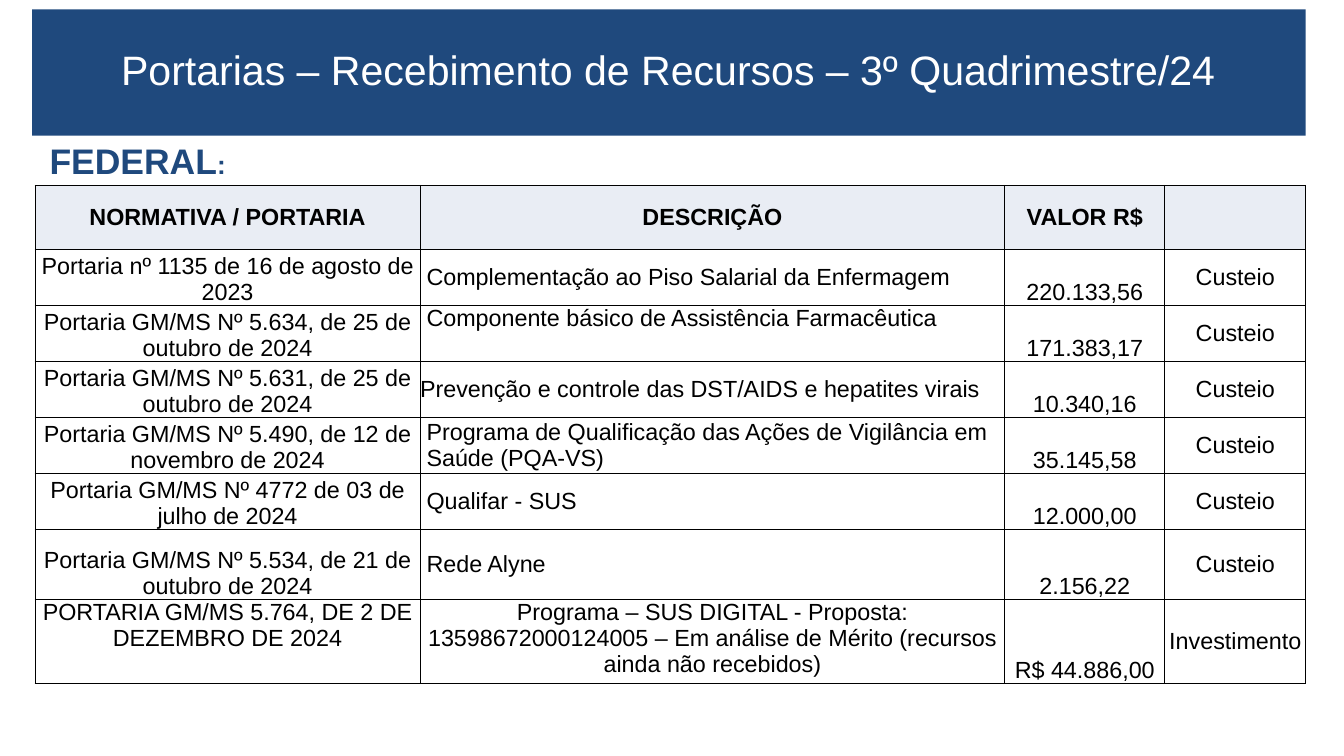
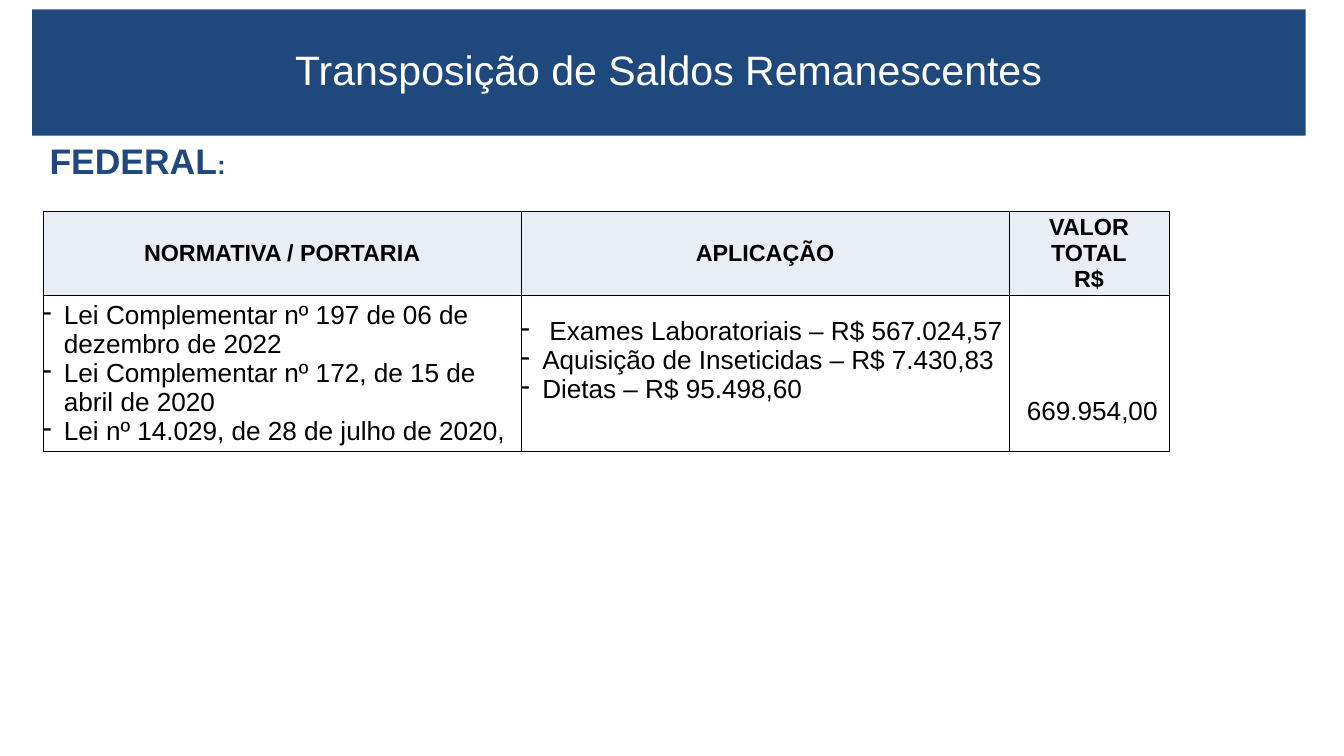
"""Builds two slides on federal health funds, each with a title band, a label and a table."""
import pptx
import pptx.dml.color
import pptx.enum.shapes
import pptx.enum.text
import pptx.oxml
import pptx.oxml.ns
import pptx.util

Pt = pptx.util.Pt
Align = pptx.enum.text.PP_ALIGN
Anchor = pptx.enum.text.MSO_ANCHOR
INK = {"navy": "1F497D", "pale": "E9EDF4", "white": "FFFFFF", "black": "000000"}
FACE = "Arial"
BAND = (34.5, 10, 1364.5, 135.5)
LABEL = (46, 145.5, 213, 53)
BODY = 25
LIST = 28
INSET = 7
HANG = 22.5

FUNDS = [
    ("Portaria nº 1135 de 16 de agosto de 2023",
     "Complementação ao Piso Salarial da Enfermagem", "220.133,56", "Custeio"),
    ("Portaria GM/MS Nº 5.634, de 25 de outubro de 2024",
     "Componente básico de Assistência Farmacêutica", "171.383,17", "Custeio"),
    ("Portaria GM/MS Nº 5.631, de 25 de outubro de 2024",
     "Prevenção e controle das DST/AIDS e hepatites virais", "10.340,16", "Custeio"),
    ("Portaria GM/MS Nº 5.490, de 12 de novembro de 2024",
     "Programa de Qualificação das Ações de Vigilância em Saúde (PQA-VS)",
     "35.145,58", "Custeio"),
    ("Portaria GM/MS Nº 4772 de 03 de julho de 2024",
     "Qualifar - SUS", "12.000,00", "Custeio"),
    ("Portaria GM/MS Nº 5.534, de 21 de outubro de 2024",
     "Rede Alyne", "2.156,22", "Custeio"),
    ("PORTARIA GM/MS 5.764, DE 2 DE DEZEMBRO DE 2024",
     "Programa – SUS DIGITAL - Proposta: 13598672000124005 – "
     "Em análise de Mérito (recursos ainda não recebidos)",
     "R$ 44.886,00", "Investimento"),
]
LAWS = ["Lei Complementar nº 197 de 06 de dezembro de 2022",
        "Lei Complementar nº 172, de 15 de abril de 2020",
        "Lei nº 14.029, de 28 de julho de 2020,"]
USES = [" Exames Laboratoriais – R$ 567.024,57",
        "Aquisição de Inseticidas – R$ 7.430,83",
        "Dietas – R$ 95.498,60"]


def tint(name):
    """Return a named colour."""
    return pptx.dml.color.RGBColor.from_string(INK[name])


def style(font, size, color, bold=False):
    """Set the face, size, colour and weight of a font."""
    font.name, font.size, font.bold = FACE, Pt(size), bold
    font.color.rgb = tint(color)


def band(slide, box, title):
    """Draw the title band."""
    shape = slide.shapes.add_shape(
        pptx.enum.shapes.MSO_SHAPE.RECTANGLE, *map(Pt, box))
    shape.shadow.inherit = False
    shape.fill.solid()
    shape.fill.fore_color.rgb = tint("navy")
    shape.line.fill.background()
    frame = shape.text_frame
    frame.margin_left = frame.margin_right = frame.margin_top = frame.margin_bottom = 0
    frame.vertical_anchor = Anchor.MIDDLE
    para = frame.paragraphs[0]
    para.text, para.alignment, para.line_spacing = title, Align.CENTER, 0.9
    style(para.font, 44, "white")


def label(slide, box):
    """Write the label of the funding level."""
    frame = slide.shapes.add_textbox(*map(Pt, box)).text_frame
    frame.word_wrap = False
    frame.auto_size = pptx.enum.text.MSO_AUTO_SIZE.SHAPE_TO_FIT_TEXT
    for text, size in (("FEDERAL", 38), (":", 28)):
        run = frame.paragraphs[0].add_run()
        run.text = text
        style(run.font, size, "navy", True)


def edge(cell):
    """Give a cell thin black borders."""
    props = cell._tc.get_or_add_tcPr()
    for spot, side in enumerate(("lnL", "lnR", "lnT", "lnB")):
        line = pptx.oxml.parse_xml(
            f'<a:{side} {pptx.oxml.ns.nsdecls("a")} w="12700"><a:solidFill>'
            f'<a:srgbClr val="{INK["black"]}"/></a:solidFill></a:{side}>')
        props.insert(spot, line)


def dash(para):
    """Turn a paragraph into a hanging dash item."""
    props = para._p.get_or_add_pPr()
    props.set("marL", str(Pt(HANG)))
    props.set("indent", str(-Pt(HANG)))
    props.append(pptx.oxml.parse_xml(
        f'<a:buChar {pptx.oxml.ns.nsdecls("a")} char="-"/>'))


def write(cell, lines, size=BODY, bold=False, align=Align.CENTER,
          anchor=Anchor.MIDDLE, sides=(0, 0), foot=0, bullet=False):
    """Fill a cell with paragraphs."""
    cell.margin_left, cell.margin_right = map(Pt, sides)
    cell.margin_top, cell.margin_bottom = 0, Pt(foot)
    cell.vertical_anchor = anchor
    cell.text = "\n".join(lines)
    for para in cell.text_frame.paragraphs:
        para.alignment = align
        style(para.font, size, "black", bold)
        if bullet:
            dash(para)


def grid(slide, spot, cols, rows, heads):
    """Add a bordered table with a pale header row."""
    table = slide.shapes.add_table(
        len(rows), len(cols), *map(Pt, (*spot, sum(cols), sum(rows)))).table
    table.first_row = table.horz_banding = False
    for col, width in zip(table.columns, cols):
        col.width = Pt(width)
    for row, height in zip(table.rows, rows):
        row.height = Pt(height)
    for cell in table.iter_cells():
        cell.fill.background()
        edge(cell)
    for col, head in enumerate(heads):
        cell = table.cell(0, col)
        cell.fill.solid()
        cell.fill.fore_color.rgb = tint("pale")
        write(cell, head.split("\n"), bold=True)
    return table


def funds(slide, spot):
    """Place the table of funds received."""
    table = grid(slide, spot, (412.5, 626.5, 171.5, 151),
                 (68.5, *[55.7] * 5, 75, 83.5),
                 ("NORMATIVA / PORTARIA", "DESCRIÇÃO", "VALOR R$", ""))
    last = len(FUNDS)
    for row, (norm, note, value, kind) in enumerate(FUNDS, 1):
        end = row == last
        pad = (INSET, INSET) if end else (0, 0)
        write(table.cell(row, 0), [norm], sides=pad,
              anchor=Anchor.TOP if end else Anchor.BOTTOM)
        write(table.cell(row, 1), [note],
              sides=pad if end else (0 if row == 3 else INSET, 0),
              align=Align.CENTER if end else Align.LEFT,
              anchor=Anchor.TOP if row in (2, last) else Anchor.MIDDLE)
        write(table.cell(row, 2), [value], anchor=Anchor.BOTTOM)
        write(table.cell(row, 3), [kind])


def shifts(slide, spot):
    """Place the table of transferred balances."""
    table = grid(slide, spot, (512.5, 522.5, 171.5), (90, 168),
                 ("NORMATIVA / PORTARIA", "APLICAÇÃO", "VALOR TOTAL\nR$"))
    for col, (items, foot) in enumerate(((LAWS, 0), (USES, LIST))):
        write(table.cell(1, col), items, LIST, align=Align.LEFT,
              foot=foot, bullet=True)
    write(table.cell(1, 2), ["669.954,00"], LIST, anchor=Anchor.BOTTOM,
          sides=(INSET, 0), foot=LIST)


def main():
    """Build and save both slides."""
    deck = pptx.Presentation()
    deck.slide_width, deck.slide_height = Pt(1440), Pt(810)
    pages = (
        ("Portarias – Recebimento de Recursos – 3º Quadrimestre/24", funds, (37.5, 198.5)),
        ("Transposição de Saldos Remanescentes", shifts, (46, 226)),
    )
    for title, build, spot in pages:
        slide = deck.slides.add_slide(deck.slide_layouts[6])
        band(slide, BAND, title)
        label(slide, LABEL)
        build(slide, spot)
    deck.save("out.pptx")


if __name__ == "__main__":
    main()
